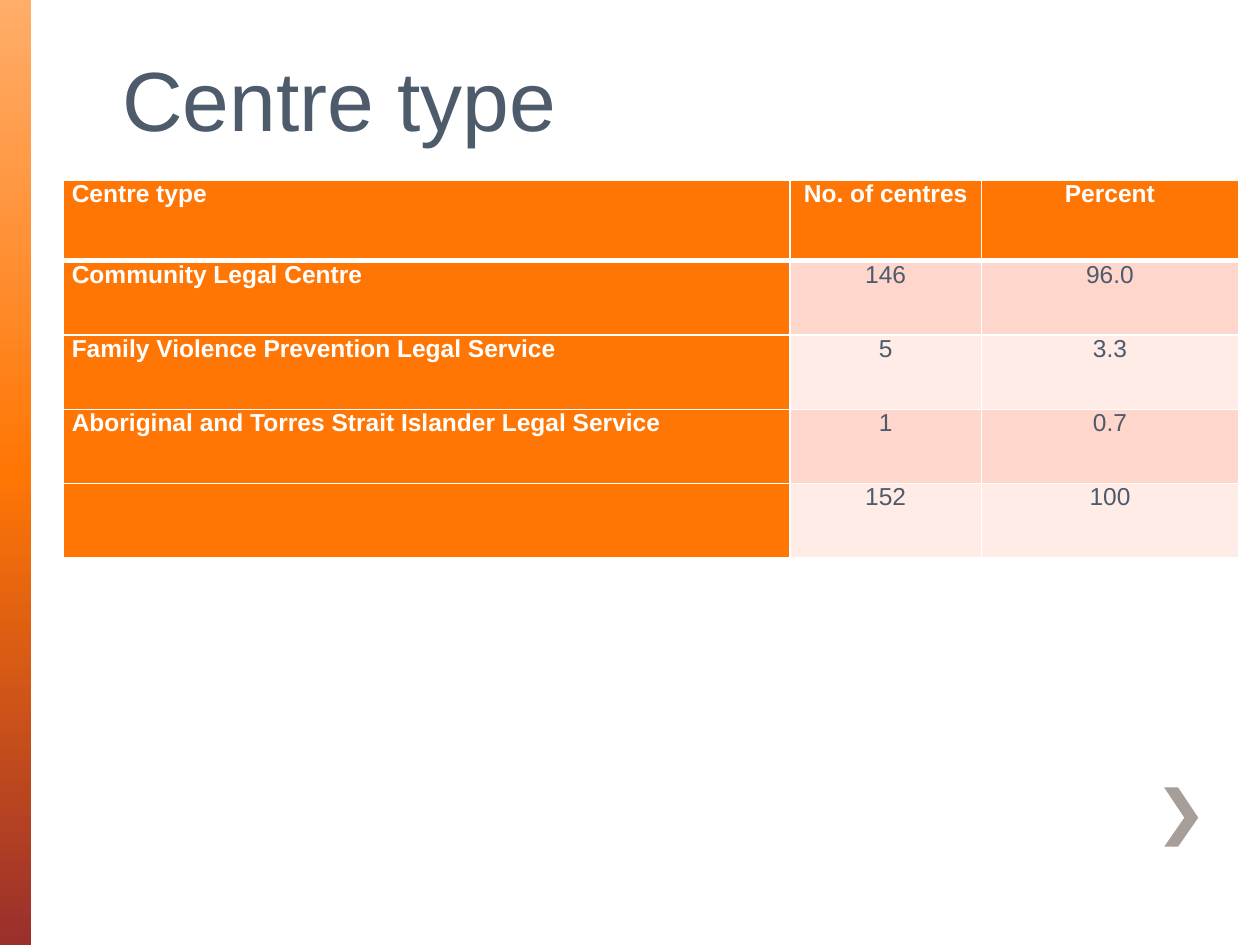
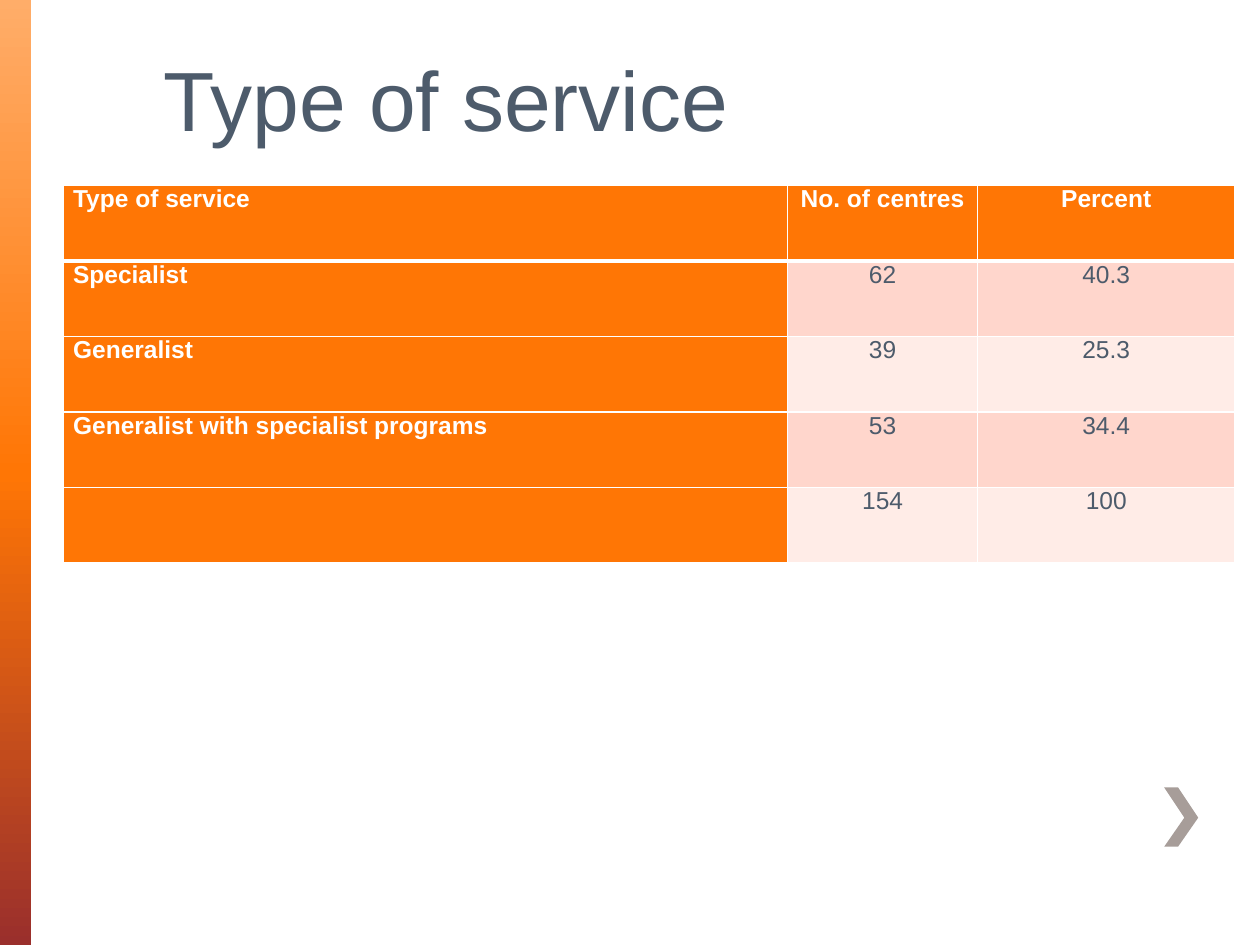
from copy import deepcopy
from dataclasses import dataclass

from lxml import etree
from pptx import Presentation
from pptx.dml.color import RGBColor
from pptx.enum.shapes import MSO_SHAPE
from pptx.enum.text import MSO_ANCHOR, MSO_AUTO_SIZE, PP_ALIGN
from pptx.oxml.ns import qn
from pptx.slide import Slide
from pptx.table import _Cell
from pptx.util import Inches, Pt

RECTANGLE = MSO_SHAPE.RECTANGLE
TOP = MSO_ANCHOR.TOP
NO_AUTOFIT = MSO_AUTO_SIZE.NONE
LEFT, CENTER = PP_ALIGN.LEFT, PP_ALIGN.CENTER

FONT = "Arial"
WHITE = RGBColor(0xFF, 0xFF, 0xFF)
SLATE = RGBColor(0x4D, 0x5B, 0x6B)
ORANGE = RGBColor(0xFF, 0x76, 0x05)
PEACH = RGBColor(0xFF, 0xAD, 0x69)
BRICK = RGBColor(0x9A, 0x2F, 0x2C)
TAUPE = RGBColor(0xA7, 0x9D, 0x99)
ROW_TINTS = (RGBColor(0xFF, 0xD6, 0xCC), RGBColor(0xFF, 0xEC, 0xE7))

BAND_STOPS = ((0, PEACH), (0.5, ORANGE), (1, BRICK))
CHEVRON = ((9.35, 6.25), (9.24, 6.25), (9.4, 6.49), (9.24, 6.72),
           (9.35, 6.72), (9.51, 6.49))
TABLE_LEFT = 0.5


@dataclass(frozen=True)
class TableSlide:
    title: str
    title_left: float
    table_top: float
    col_widths: tuple[float, ...]
    header_height: float
    row_height: float
    side_margin: float
    rows: tuple[tuple[str, str, str], ...]


TABLE_SLIDES = (
    TableSlide("Centre type", 0.87, 1.43, (5.77, 1.52, 2.04), 0.64, 0.59, 0.07, (
        ("Centre type", "No. of centres", "Percent"),
        ("Community Legal Centre", "146", "96.0"),
        ("Family Violence Prevention Legal Service", "5", "3.3"),
        ("Aboriginal and Torres Strait Islander Legal Service", "1", "0.7"),
        ("", "152", "100"),
    )),
    TableSlide("Type of service", 1.2, 1.47, (5.75, 1.51, 2.04), 0.6, 0.6, 0.08, (
        ("Type of service", "No. of centres", "Percent"),
        ("Specialist", "62", "40.3"),
        ("Generalist", "39", "25.3"),
        ("Generalist with specialist programs", "53", "34.4"),
        ("", "154", "100"),
    )),
)


def add_side_band(slide: Slide) -> None:
    sp = slide.shapes.add_shape(RECTANGLE, 0, 0, Inches(0.25), Inches(7.5))
    sp.shadow.inherit = False
    sp.line.fill.background()
    sp.fill.gradient()
    sp.fill.gradient_angle = 270
    stop_list = next(sp._element.iter(qn("a:gsLst")))
    stop_list.append(deepcopy(stop_list[-1]))
    for stop, (position, color) in zip(sp.fill.gradient_stops, BAND_STOPS):
        stop.position = position
        stop.color.rgb = color


def add_chevron(slide: Slide) -> None:
    points = [(Inches(x), Inches(y)) for x, y in CHEVRON]
    builder = slide.shapes.build_freeform(*points[0])
    builder.add_line_segments(points[1:], close=True)
    sp = builder.convert_to_shape()
    sp.shadow.inherit = False
    sp.line.fill.background()
    sp.fill.solid()
    sp.fill.fore_color.rgb = TAUPE


def set_title(slide: Slide, text: str, left: float) -> None:
    title = slide.shapes.title
    title.left, title.top = Inches(left), Inches(0.33)
    title.width, title.height = Inches(4.87), Inches(0.91)
    tf = title.text_frame
    tf.text = text
    tf.auto_size = NO_AUTOFIT
    tf.vertical_anchor = TOP
    p = tf.paragraphs[0]
    p.alignment = LEFT
    p.space_after = Pt(12)
    p.font.name, p.font.size = FONT, Pt(48)
    p.font.color.rgb = SLATE


def set_borders(cell: _Cell, top: float, bottom: float) -> None:
    """Draw white cell borders; top and bottom widths are in points."""
    tc_pr = cell._tc.get_or_add_tcPr()
    for tag, width in (("a:lnL", 1), ("a:lnR", 1), ("a:lnT", top), ("a:lnB", bottom)):
        line = etree.SubElement(tc_pr, qn(tag), w=str(Pt(width)))
        fill = etree.SubElement(line, qn("a:solidFill"))
        etree.SubElement(fill, qn("a:srgbClr"), val=str(WHITE))


def format_cell(cell: _Cell, text: str, row: int, col: int, margin: float) -> None:
    is_heading = row == 0 or col == 0
    set_borders(cell, top=3 if row == 1 else 1, bottom=3 if row == 0 else 1)
    cell.fill.solid()
    cell.fill.fore_color.rgb = ORANGE if is_heading else ROW_TINTS[(row - 1) % 2]
    cell.margin_left = cell.margin_right = Inches(margin)
    cell.margin_top = cell.margin_bottom = 0
    cell.vertical_anchor = TOP
    cell.text = text
    p = cell.text_frame.paragraphs[0]
    p.alignment = LEFT if col == 0 else CENTER
    p.font.name, p.font.size, p.font.bold = FONT, Pt(14), is_heading
    p.font.color.rgb = WHITE if is_heading else SLATE


def add_centre_table(slide: Slide, content: TableSlide) -> None:
    n_rows, n_cols = len(content.rows), len(content.col_widths)
    height = content.header_height + content.row_height * (n_rows - 1)
    table = slide.shapes.add_table(
        n_rows, n_cols, Inches(TABLE_LEFT), Inches(content.table_top),
        Inches(sum(content.col_widths)), Inches(height)).table
    table.first_col = True
    for column, width in zip(table.columns, content.col_widths):
        column.width = Inches(width)
    for r, texts in enumerate(content.rows):
        table.rows[r].height = Inches(content.row_height if r else content.header_height)
        for c, text in enumerate(texts):
            format_cell(table.cell(r, c), text, r, c, content.side_margin)


def main() -> None:
    prs = Presentation()
    prs.slide_width, prs.slide_height = Inches(10), Inches(7.5)
    title_only = prs.slide_layouts[5]
    for content in TABLE_SLIDES:
        slide = prs.slides.add_slide(title_only)
        add_side_band(slide)
        add_chevron(slide)
        set_title(slide, content.title, content.title_left)
        add_centre_table(slide, content)
    prs.save("out.pptx")


if __name__ == "__main__":
    main()
